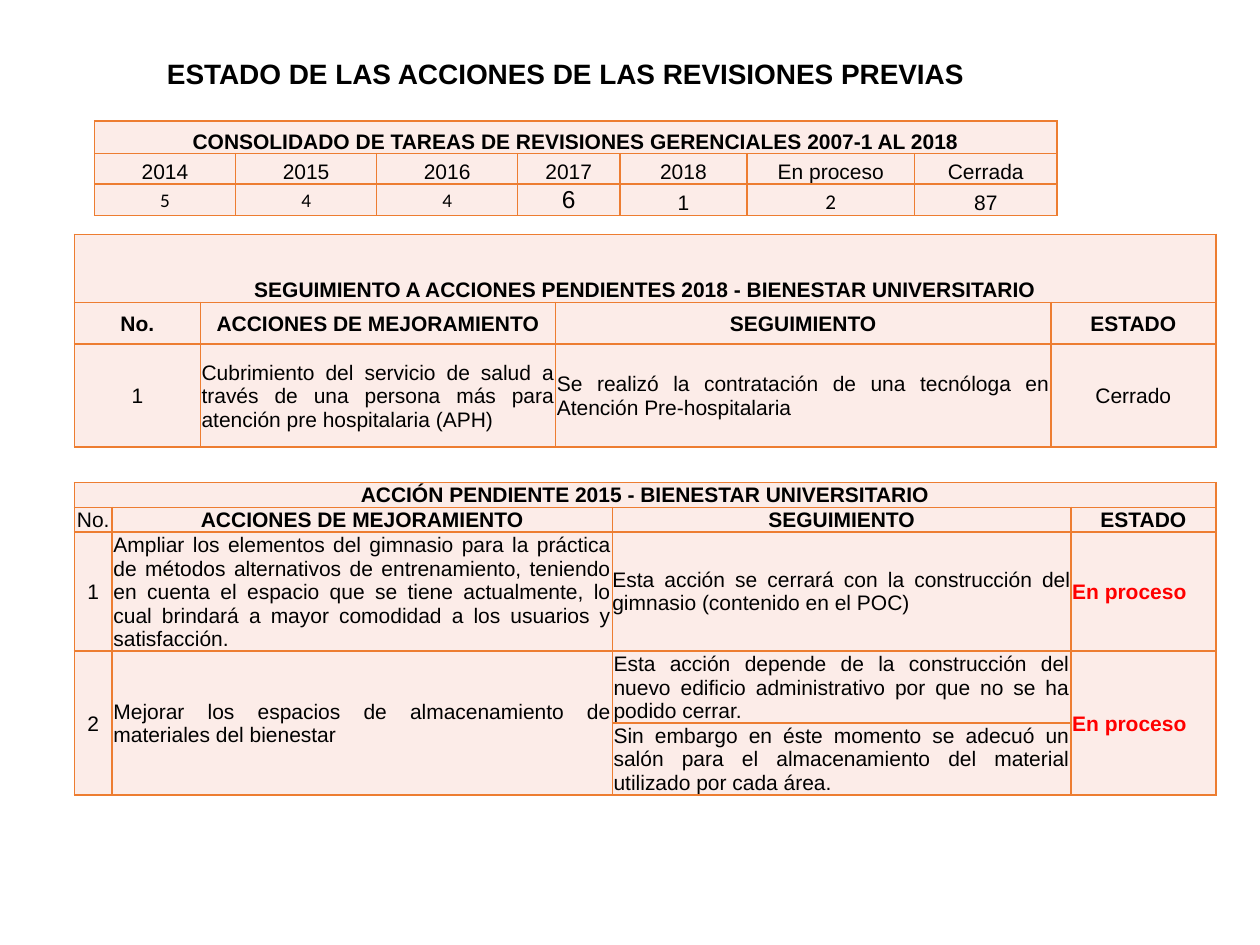
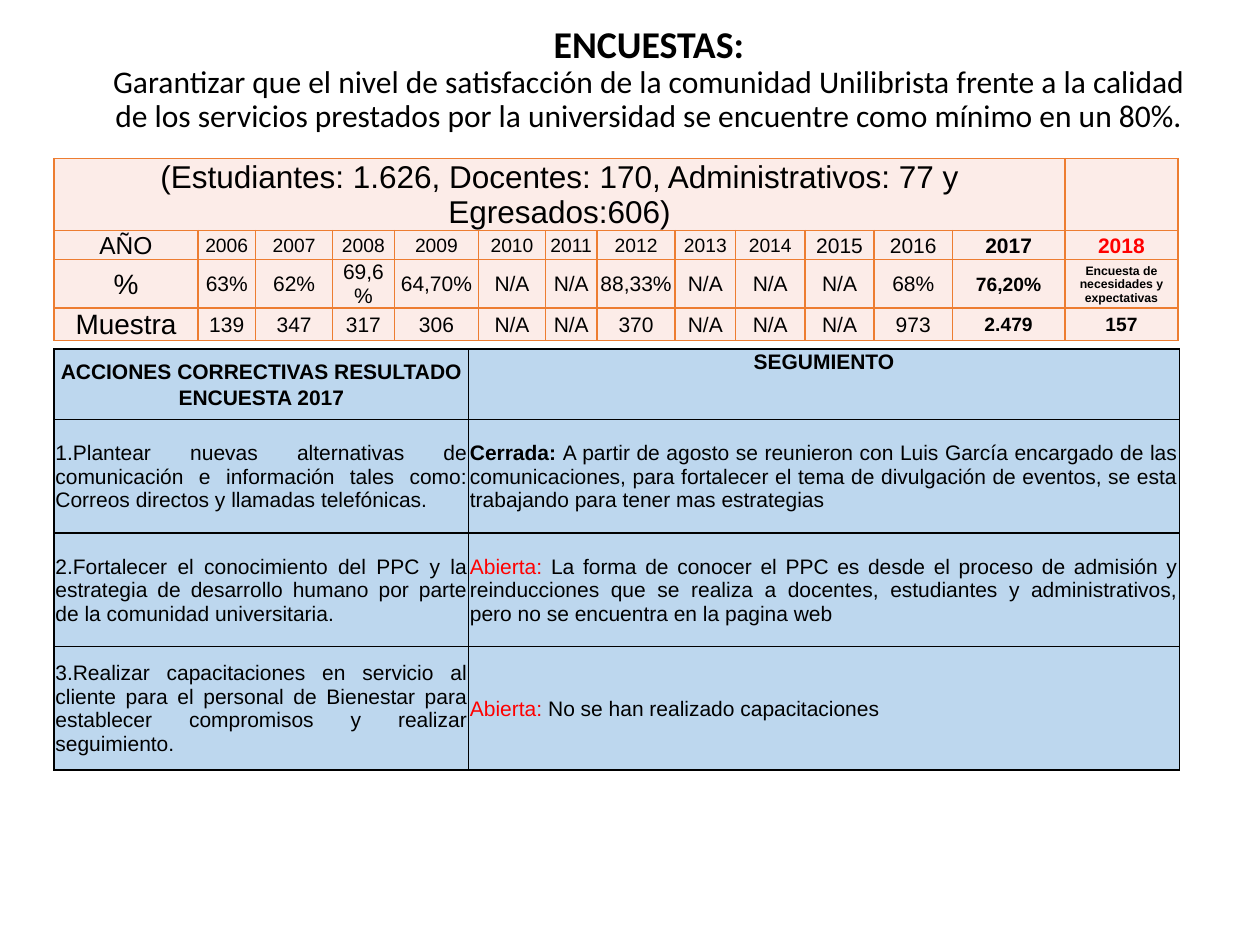
from dataclasses import dataclass, field

from lxml import etree
from pptx import Presentation
from pptx import util as u
from pptx.dml.color import RGBColor
from pptx.enum import text
from pptx.oxml import ns

CENTER, JUSTIFY, LEFT = text.PP_ALIGN.CENTER, text.PP_ALIGN.JUSTIFY, text.PP_ALIGN.LEFT
TOP, MIDDLE, BOTTOM = text.MSO_ANCHOR.TOP, text.MSO_ANCHOR.MIDDLE, text.MSO_ANCHOR.BOTTOM


@dataclass(frozen=True)
class Theme:
    ink: str = "000000"
    alert: str = "FF0000"
    peach: str = "FCECE8"
    orange: str = "ED7D31"
    sky: str = "BDD7EE"
    body_font: str = "Arial"
    alternate_font: str = "Calibri"
    tiny: float = 7
    small: float = 11
    body: float = 12
    medium: float = 14
    large: float = 16
    lead: float = 18
    heading: float = 21.6


THEME = Theme()


@dataclass
class Cell:
    """Text of a table cell, either one string or (string, font overrides) runs."""
    content: str | list = ""
    size: float = THEME.body
    bold: bool = False
    color: str = THEME.ink
    font: str = THEME.body_font
    align: int = CENTER
    anchor: int = MIDDLE
    spacing: float = 1
    margins: tuple = field(default=(0.1, 0.1, 0.1, 0))

    def runs(self):
        return [(self.content, {})] if isinstance(self.content, str) else self.content


def head(content, **style):
    return Cell(content, bold=True, **style)


def prose(content, **style):
    return Cell(content, align=JUSTIFY, **style)


class Deck:
    """Builds slides on a grid of 100 columns by 75 rows."""
    COLUMNS, ROWS = 100, 75

    def __init__(self, theme):
        self.theme = theme
        self.presentation = Presentation()
        self.presentation.slide_width = u.Inches(10)
        self.presentation.slide_height = u.Inches(7.5)
        self.slide = None

    def x(self, columns):
        return round(self.presentation.slide_width * columns / self.COLUMNS)

    def y(self, rows):
        return round(self.presentation.slide_height * rows / self.ROWS)

    def add_slide(self):
        self.slide = self.presentation.slides.add_slide(self.presentation.slide_layouts[5])

    def style_font(self, font, size=None, bold=None, color=None, name=None):
        if size:
            font.size = u.Pt(size)
        if bold is not None:
            font.bold = bold
        if color:
            font.color.rgb = RGBColor.from_string(color)
        if name:
            font.name = name

    def title(self, left, top, width, height, lines, font, anchor=TOP, spacing=1):
        """Fill the title with (string, size, bold) lines."""
        shape = self.slide.shapes.title
        shape.left, shape.top = self.x(left), self.y(top)
        shape.width, shape.height = self.x(width), self.y(height)
        frame = shape.text_frame
        frame.word_wrap = True
        frame.auto_size = text.MSO_AUTO_SIZE.NONE
        frame.vertical_anchor = anchor
        paragraph = frame.paragraphs[0]
        paragraph.alignment = CENTER
        paragraph.line_spacing = spacing
        self.style_font(paragraph.font, color=self.theme.ink, name=font)
        for index, (content, size, bold) in enumerate(lines):
            if index:
                paragraph.add_line_break()
            run = paragraph.add_run()
            run.text = content
            self.style_font(run.font, size, bold)

    def table(self, left, top, widths, heights, cells, fill, border, merges=()):
        """Draw rows of cells; merges lists (first row, first column, last row, last column)."""
        frame = self.slide.shapes.add_table(
            len(heights), len(widths), self.x(left), self.y(top),
            self.x(sum(widths)), self.y(sum(heights)))
        table = frame.table
        table.first_row = table.horz_banding = False
        for column, width in zip(table.columns, widths):
            column.width = self.x(width)
        for row, height in zip(table.rows, heights):
            row.height = self.y(height)
        for row_index in range(len(heights)):
            for column_index in range(len(widths)):
                row_cells = cells[row_index]
                content = row_cells[column_index] if column_index < len(row_cells) else None
                self.fill_cell(table.cell(row_index, column_index), content or Cell(), fill, border)
        for first_row, first_column, last_row, last_column in merges:
            table.cell(first_row, first_column).merge(table.cell(last_row, last_column))

    def fill_cell(self, cell, content, fill, border):
        self.border_cell(cell, border)
        cell.fill.solid()
        cell.fill.fore_color.rgb = RGBColor.from_string(fill)
        left, top, right, bottom = content.margins
        cell.margin_left, cell.margin_right = self.x(left), self.x(right)
        cell.margin_top, cell.margin_bottom = self.y(top), self.y(bottom)
        cell.vertical_anchor = content.anchor
        paragraph = cell.text_frame.paragraphs[0]
        paragraph.alignment = content.align
        paragraph.line_spacing = content.spacing
        self.style_font(paragraph.font, content.size, content.bold, content.color, content.font)
        for string, overrides in content.runs():
            if string:
                run = paragraph.add_run()
                run.text = string
                self.style_font(run.font, **overrides)

    def border_cell(self, cell, color):
        properties = cell._tc.get_or_add_tcPr()
        for side in ("lnL", "lnR", "lnT", "lnB"):
            line = etree.SubElement(properties, ns.qn(f"a:{side}"), w=str(u.Pt(1)))
            solid = etree.SubElement(line, ns.qn("a:solidFill"))
            etree.SubElement(solid, ns.qn("a:srgbClr"), val=color)


def add_previous_reviews(deck):
    theme = deck.theme
    colors = {"fill": theme.peach, "border": theme.orange}
    deck.add_slide()
    deck.title(5.9, 4, 78, 3.7,
               [("ESTADO DE LAS ACCIONES DE LAS REVISIONES PREVIAS", theme.large, True)],
               theme.body_font)

    periods = ["2014", "2015", "2016", "2017", "2018", "En proceso", "Cerrada"]
    older_counts = [Cell(count, size=theme.small, font=theme.alternate_font, spacing=1.07)
                    for count in ("5", "4", "4")]
    deck.table(7.5, 9.6, [11.2, 11.2, 11.2, 8.1, 10.1, 13.3, 11.3], [2.6, 2.4, 2.5], [
        [head("CONSOLIDADO DE TAREAS DE REVISIONES GERENCIALES 2007-1 AL 2018", anchor=BOTTOM)],
        [Cell(period, anchor=BOTTOM) for period in periods],
        older_counts + [
            Cell("6", size=theme.medium, margins=(0, 0, 0, 0)),
            Cell("1", anchor=BOTTOM),
            Cell("2", font=theme.alternate_font, anchor=BOTTOM),
            Cell("87", anchor=BOTTOM)],
    ], merges=[(0, 0, 0, 6)], **colors)

    headings = [head(name) for name in ("ACCIONES DE MEJORAMIENTO", "SEGUIMIENTO", "ESTADO")]
    deck.table(5.9, 18.6, [10, 28.2, 39.3, 13.1], [5.4, 3.3, 8.2], [
        [head("SEGUIMIENTO A ACCIONES PENDIENTES 2018 - BIENESTAR UNIVERSITARIO", anchor=BOTTOM)],
        [head("No.")] + headings,
        [Cell("1"),
         prose("Cubrimiento del servicio de salud a través de una persona más para "
               "atención pre hospitalaria (APH)"),
         prose("Se realizó la contratación de una tecnóloga en Atención Pre-hospitalaria"),
         Cell("Cerrado")],
    ], merges=[(0, 0, 0, 3)], **colors)

    in_progress = head("En proceso", color=theme.alert, align=LEFT)
    deck.table(5.9, 38.3, [3, 39.7, 36.4, 11.5], [1.95, 1.95, 9.45, 5.7, 5.7], [
        [head("ACCIÓN PENDIENTE 2015 - BIENESTAR UNIVERSITARIO", anchor=BOTTOM)],
        [Cell("No.")] + headings,
        [Cell("1"),
         prose("Ampliar los elementos del gimnasio para la práctica de métodos alternativos de "
               "entrenamiento, teniendo en cuenta el espacio que se tiene actualmente, lo cual "
               "brindará a mayor comodidad a los usuarios y satisfacción."),
         prose("Esta acción se cerrará con la construcción del gimnasio (contenido en el POC)",
               margins=(0, 0, 0, 0)),
         in_progress],
        [Cell("2"),
         prose("Mejorar los espacios de almacenamiento de materiales del bienestar"),
         prose("Esta acción depende de la construcción del nuevo edificio administrativo "
               "por que no se ha podido cerrar."),
         in_progress],
        [None, None,
         prose("Sin embargo en éste momento se adecuó un salón para el almacenamiento "
               "del material utilizado por cada área.")],
    ], merges=[(0, 0, 0, 3), (3, 0, 4, 0), (3, 1, 4, 1), (3, 3, 4, 3)], **colors)


def add_surveys(deck):
    theme = deck.theme
    deck.add_slide()
    deck.title(7.9, 1.6, 87.2, 9.6, [
        ("ENCUESTAS:", theme.heading, True),
        ("Garantizar que el nivel de satisfacción de la comunidad Unilibrista frente a la calidad "
         "de los servicios prestados por la universidad se encuentre como mínimo en un 80%.",
         theme.lead, False),
    ], theme.alternate_font, anchor=BOTTOM, spacing=0.9)

    years = [Cell(str(year), size=theme.small if year < 2015 else theme.body)
             for year in range(2006, 2017)]
    rates = ["63%", "62%", "69,6%", "64,70%", "N/A", "N/A", "88,33%", "N/A", "N/A", "N/A", "68%"]
    samples = ["139", "347", "317", "306", "N/A", "N/A", "370", "N/A", "N/A", "N/A", "973"]
    widths = [11.4, 4.6, 6.1, 4.9, 6.7, 5.3, 4.1, 6.2, 4.8, 5.5, 5.5, 6.2, 8.95, 8.95]
    deck.table(4.3, 12.6, widths, [5.7, 2.3, 3.85, 2.6], [
        [Cell("(Estudiantes: 1.626, Docentes: 170, Administrativos: 77 y Egresados:606)",
              size=theme.lead)],
        [Cell("AÑO", size=theme.medium), *years, head("2017"), head("2018", color=theme.alert)],
        [Cell("%", size=theme.large), *map(Cell, rates), head("76,20%", size=theme.small),
         head("Encuesta de necesidades y expectativas", size=theme.tiny)],
        [Cell("Muestra", size=theme.large), *map(Cell, samples),
         head("2.479", size=theme.small), head("157", size=theme.small)],
    ], theme.peach, theme.orange, merges=[(0, 0, 0, 12)])

    heading_style = {"spacing": 1.07, "margins": (0.4, 0, 0.4, 0)}
    open_status = ("Abierta: ", {"color": theme.alert})
    deck.table(4.3, 27.7, [32.9, 56.4], [5.6, 9, 9, 9.8], [
        [head("ACCIONES CORRECTIVAS RESULTADO ENCUESTA 2017", **heading_style),
         head("SEGUMIENTO", anchor=TOP, **heading_style)],
        [prose("1.Plantear nuevas alternativas de comunicación e información tales como: "
               "Correos directos y llamadas telefónicas."),
         prose([("Cerrada: ", {"bold": True}),
                ("A partir de agosto se reunieron con Luis García encargado de las "
                 "comunicaciones, para fortalecer el tema de divulgación de eventos, se esta "
                 "trabajando para tener mas estrategias", {})])],
        [prose("2.Fortalecer el conocimiento del PPC y la estrategia de desarrollo humano "
               "por parte de la comunidad universitaria."),
         prose([open_status,
                ("La forma de conocer el PPC es desde el proceso de admisión y reinducciones "
                 "que se realiza a docentes, estudiantes y administrativos, pero no se "
                 "encuentra en la pagina web", {})])],
        [prose("3.Realizar capacitaciones en servicio al cliente para el personal de Bienestar "
               "para establecer compromisos y realizar seguimiento."),
         prose([open_status, ("No se han realizado capacitaciones", {})])],
    ], theme.sky, theme.ink)


def main():
    deck = Deck(THEME)
    add_previous_reviews(deck)
    add_surveys(deck)
    deck.presentation.save("out.pptx")


if __name__ == "__main__":
    main()
